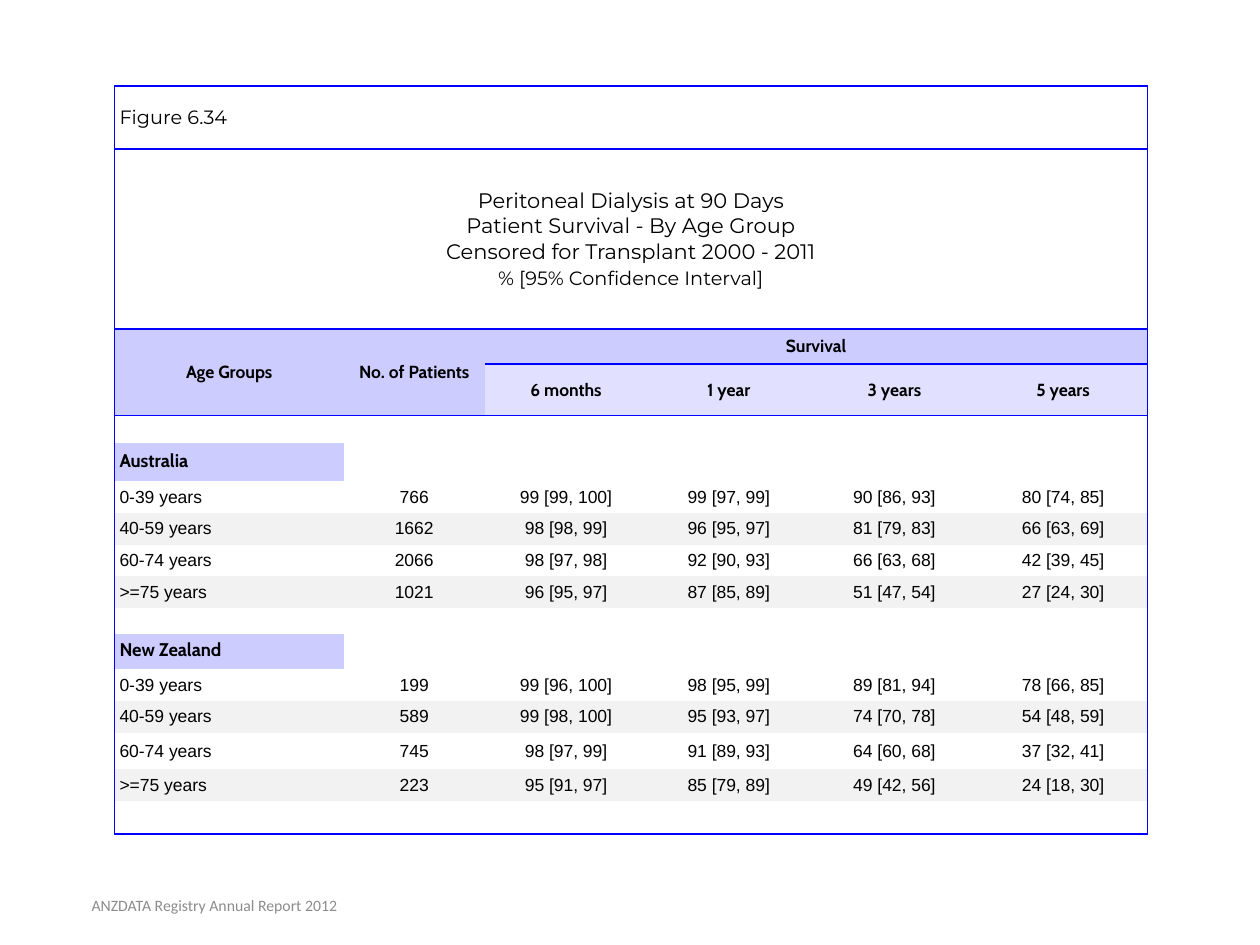
import pptx
import pptx.dml.color
import pptx.enum.text
import pptx.oxml.ns
import pptx.util
from lxml import etree
from pptx.util import Cm, Pt

COLORS = {"line": "0000FF", "head": "CCCCFF", "subhead": "E1E1FF",
          "band": "F2F2F2", "text": "000000", "footer": "8C8C8C"}
CENTER = pptx.enum.text.PP_ALIGN.CENTER
LEFT = pptx.enum.text.PP_ALIGN.LEFT
MIDDLE = pptx.enum.text.MSO_ANCHOR.MIDDLE
qn = pptx.oxml.ns.qn


def write(p, text, font="Arial", size=10, bold=False, color="text", align=CENTER,
          before=None, after=None, spacing=None):
    p.alignment = align
    if before is not None:
        p.space_before = Pt(before)
    if after is not None:
        p.space_after = Pt(after)
    if spacing is not None:
        p.line_spacing = spacing
    r = p.add_run()
    r.text = text
    r.font.name = font
    r.font.size = Pt(size)
    r.font.bold = bold
    r.font.color.rgb = pptx.dml.color.RGBColor.from_string(COLORS[color])


def set_borders(cell, sides):
    tc_pr = cell._tc.get_or_add_tcPr()
    for i, side in enumerate("LRTB"):
        ln = etree.Element(qn("a:ln" + side), w=str(Pt(1)))
        if side in sides:
            fill = etree.SubElement(ln, qn("a:solidFill"))
            etree.SubElement(fill, qn("a:srgbClr"), val=COLORS["line"])
        else:
            etree.SubElement(ln, qn("a:noFill"))
        tc_pr.insert(i, ln)


prs = pptx.Presentation()
prs.slide_width, prs.slide_height = Cm(25.4), Cm(19.05)
s = prs.slides.add_slide(prs.slide_layouts[6])

# Table grid
widths = [4.62, 2.84, 3.28, 3.28, 3.4, 3.4]
heights = [1.27, 3.63, 0.71, 1.04, 0.56, 0.76, 0.64, 0.64, 0.64, 0.64,
           0.52, 0.71, 0.64, 0.64, 0.74, 0.64, 0.66]
last_row, last_col = len(heights) - 1, len(widths) - 1
table = s.shapes.add_table(len(heights), len(widths), Cm(2.31), Cm(1.73),
                           Cm(sum(widths)), Cm(sum(heights))).table
table.first_row = table.horz_banding = False
for col, width in zip(table.columns, widths):
    col.width = Cm(width)
for row, height in zip(table.rows, heights):
    row.height = Cm(height)

# Merged cells: first and last corner
for top, left, bottom, right in [(0, 0, 0, 5), (1, 0, 1, 5), (2, 0, 3, 0),
                                 (2, 1, 3, 1), (2, 2, 2, 5)]:
    table.cell(top, left).merge(table.cell(bottom, right))

fills = {}

# Figure number and title
write(table.cell(0, 0).text_frame.paragraphs[0], "Figure 6.34",
      font="Montserrat", size=11, align=LEFT)
tf = table.cell(1, 0).text_frame
write(tf.paragraphs[0], "Peritoneal Dialysis at 90 Days", font="Montserrat", size=12)
for line in ["Patient Survival - By Age Group", "Censored for Transplant 2000 - 2011"]:
    write(tf.add_paragraph(), line, font="Montserrat", size=12)
write(tf.add_paragraph(), "% [95% Confidence Interval]", font="Montserrat", size=11, before=1)

# Column headings
headings = [(2, 0, "Age Groups", "head"), (2, 1, "No. of Patients", "head"),
            (2, 2, "Survival", "head"), (3, 2, "6 months", "subhead"),
            (3, 3, "1 year", "subhead"), (3, 4, "3 years", "subhead"),
            (3, 5, "5 years", "subhead")]
for i, j, text, fill in headings:
    write(table.cell(i, j).text_frame.paragraphs[0], text, font="Cabin", bold=True)
    fills[i, j] = fill

# Survival by country and age group
countries = [
    (5, "Australia", [
        ["0-39 years", "766", "99 [99, 100]", "99 [97, 99]", "90 [86, 93]", "80 [74, 85]"],
        ["40-59 years", "1662", "98 [98, 99]", "96 [95, 97]", "81 [79, 83]", "66 [63, 69]"],
        ["60-74 years", "2066", "98 [97, 98]", "92 [90, 93]", "66 [63, 68]", "42 [39, 45]"],
        [">=75 years", "1021", "96 [95, 97]", "87 [85, 89]", "51 [47, 54]", "27 [24, 30]"]]),
    (11, "New Zealand", [
        ["0-39 years", "199", "99 [96, 100]", "98 [95, 99]", "89 [81, 94]", "78 [66, 85]"],
        ["40-59 years", "589", "99 [98, 100]", "95 [93, 97]", "74 [70, 78]", "54 [48, 59]"],
        ["60-74 years", "745", "98 [97, 99]", "91 [89, 93]", "64 [60, 68]", "37 [32, 41]"],
        [">=75 years", "223", "95 [91, 97]", "85 [79, 89]", "49 [42, 56]", "24 [18, 30]"]]),
]
for start, country, groups in countries:
    write(table.cell(start, 0).text_frame.paragraphs[0], country, font="Cabin",
          size=10.5, bold=True, align=LEFT, spacing=0.75)
    fills[start, 0] = "head"
    for k, values in enumerate(groups):
        for j, value in enumerate(values):
            write(table.cell(start + 1 + k, j).text_frame.paragraphs[0], value,
                  align=CENTER if j else LEFT, after=14)
            if k % 2:
                fills[start + 1 + k, j] = "band"

# Margins, fills and borders
for i in range(len(heights)):
    for j in range(len(widths)):
        cell = table.cell(i, j)
        cell.vertical_anchor = MIDDLE
        cell.margin_left = cell.margin_right = Cm(0.1)
        cell.margin_top = cell.margin_bottom = Cm(0.1 if i < 2 else 0.05)
        if not cell.text_frame.text:
            p = cell.text_frame.paragraphs[0]
            etree.SubElement(p._p, qn("a:endParaRPr"), sz="600")
        if (i, j) in fills:
            cell.fill.solid()
            cell.fill.fore_color.rgb = pptx.dml.color.RGBColor.from_string(COLORS[fills[i, j]])
        else:
            cell.fill.background()
        bottom, right = i, j
        if cell.is_merge_origin:
            bottom, right = i + cell.span_height - 1, j + cell.span_width - 1
        sides = "L" if j == 0 else ""
        if right == last_col:
            sides += "R"
        if i in (0, 1, 2, 4) or (i == 3 and j >= 2):
            sides += "T"
        if bottom in (0, 1, 3, last_row) or (bottom == 2 and j >= 2):
            sides += "B"
        set_borders(cell, sides)

# Footer
tf = s.shapes.add_textbox(Cm(0.51), Cm(17.73), Cm(7.62), Cm(1.02)).text_frame
tf.word_wrap = True
tf.vertical_anchor = MIDDLE
write(tf.paragraphs[0], "ANZDATA Registry Annual Report 2012", font="Calibri",
      size=9, color="footer")

prs.save("out.pptx")
